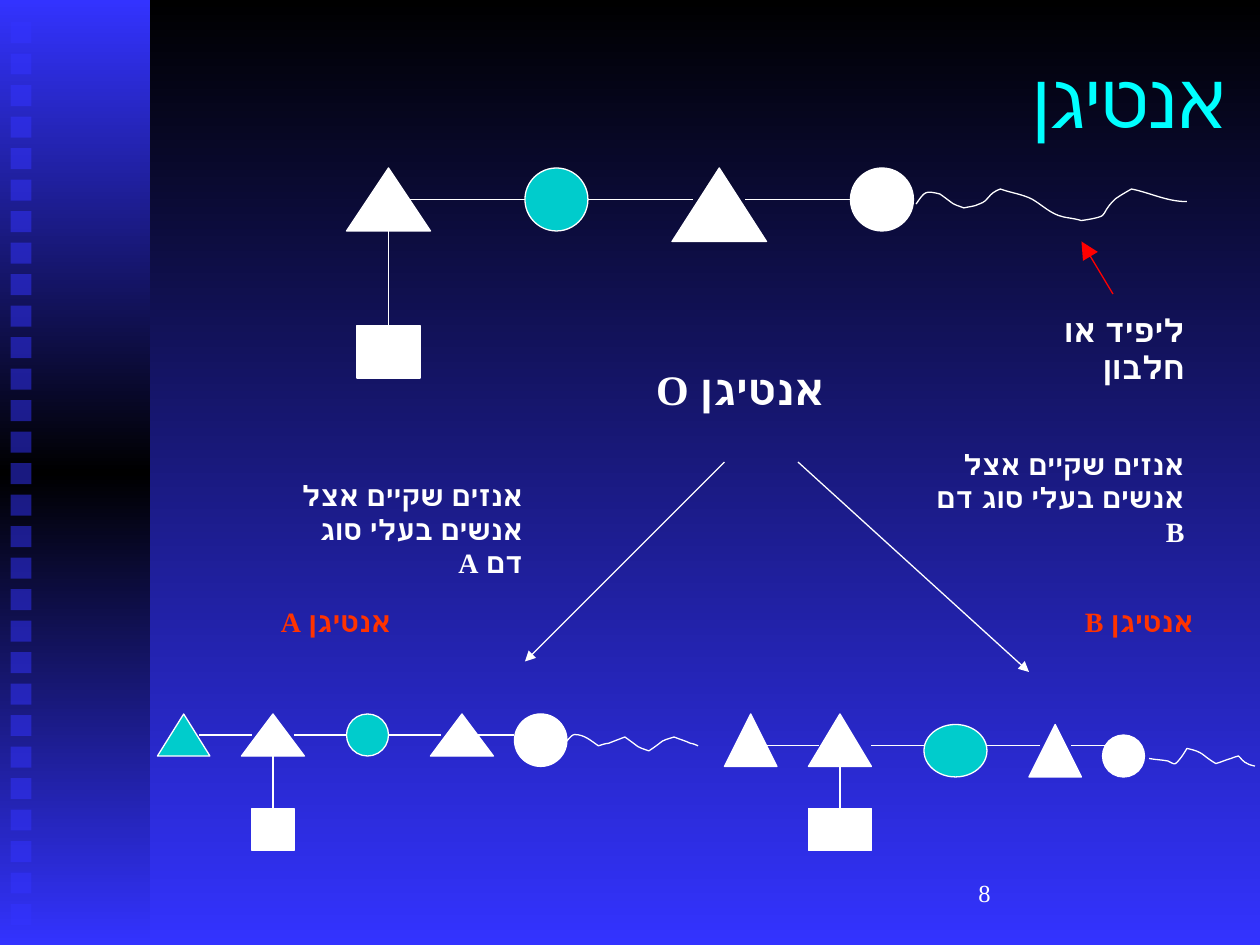
import copy

import pptx
import pptx.dml.color
import pptx.enum.shapes
import pptx.enum.text
import pptx.oxml
import pptx.oxml.ns
import pptx.util

WHITE, TEAL, BLUE, BLACK = "FFFFFF", "00CCCC", "3333FF", "000000"
CYAN, RED, ORANGE = "00FFFF", "FF0000", "FF3300"
FONT = "Times New Roman"
SHAPE = pptx.enum.shapes.MSO_SHAPE
ALIGN = pptx.enum.text.PP_ALIGN
TRIANGLE, CIRCLE, SQUARE = SHAPE.ISOSCELES_TRIANGLE, SHAPE.OVAL, SHAPE.RECTANGLE

# Wavy chains: a start point, then three curve points per bend, in inches.
CHAIN_O = [
    (7.27, 1.62), (7.34, 1.52), (7.34, 1.51), (7.46, 1.54),
    (7.6, 1.64), (7.54, 1.61), (7.65, 1.65), (7.69, 1.64), (7.73, 1.64), (7.77, 1.62),
    (7.86, 1.59), (7.83, 1.54), (7.94, 1.5), (8.02, 1.53), (8.11, 1.54), (8.19, 1.58),
    (8.26, 1.62), (8.32, 1.68), (8.4, 1.71), (8.45, 1.73), (8.52, 1.73), (8.58, 1.75),
    (8.59, 1.75), (8.73, 1.73), (8.75, 1.71), (8.77, 1.69), (8.78, 1.66), (8.79, 1.65),
    (8.81, 1.62), (8.83, 1.6), (8.85, 1.58), (8.89, 1.55), (8.98, 1.5), (8.98, 1.5),
    (9.13, 1.53), (9.26, 1.6), (9.42, 1.6)]
CHAIN_A = [
    (4.5, 5.88), (4.52, 5.86), (4.54, 5.83), (4.56, 5.83),
    (4.64, 5.83), (4.69, 5.88), (4.75, 5.92), (4.78, 5.91), (4.81, 5.9), (4.83, 5.9),
    (4.88, 5.88), (4.96, 5.85), (4.96, 5.85), (5.1, 5.95), (5.04, 5.92), (5.15, 5.96),
    (5.3, 5.86), (5.22, 5.89), (5.35, 5.85), (5.4, 5.87), (5.44, 5.88), (5.48, 5.9),
    (5.5, 5.9), (5.54, 5.92), (5.54, 5.92)]
CHAIN_B = [
    (9.12, 6.02), (9.17, 6.03), (9.22, 6.03), (9.27, 6.04),
    (9.29, 6.05), (9.32, 6.07), (9.33, 6.06), (9.37, 6.03), (9.42, 5.94), (9.42, 5.94),
    (9.56, 5.97), (9.53, 5.99), (9.65, 6.06), (9.69, 6.05), (9.73, 6.03), (9.77, 6.02),
    (9.79, 6.01), (9.83, 6), (9.83, 6), (9.85, 6.02), (9.87, 6.05), (9.9, 6.06),
    (9.91, 6.07), (9.96, 6.08), (9.96, 6.08)]


def grid(steps):
    """Length of a number of grid steps, twelve to the inch."""
    return pptx.util.Cm(steps * 2.54 / 12)


def rgb(code):
    return pptx.dml.color.RGBColor.from_string(code)


def xml_node(tag, **attributes):
    node = pptx.oxml.parse_xml(f"<a:{tag} {pptx.oxml.ns.nsdecls('a')}/>")
    for name, value in attributes.items():
        node.set(name, value)
    return node


def find(shape, tag):
    return shape._element.spPr.find(".//" + pptx.oxml.ns.qn(tag))


def draw_outline(line, color=WHITE):
    line.color.rgb = rgb(color)
    line.width = pptx.util.Pt(0.75)


def fade_down(fill, top, bottom):
    fill.gradient()
    fill.gradient_angle = 270
    for stop, color in zip(fill.gradient_stops, (top, bottom)):
        stop.color.rgb = rgb(color)


def add_block(shapes, kind, box, color):
    block = shapes.add_shape(kind, *map(grid, box))
    block.shadow.inherit = False
    block.fill.solid()
    block.fill.fore_color.rgb = rgb(color)
    block.line.fill.background()
    return block


def add_line(shapes, start, end, color=WHITE, head=None):
    """Straight line; head is the arrowhead size, such as med or lg."""
    line = shapes.add_connector(
        pptx.enum.shapes.MSO_CONNECTOR.STRAIGHT, *map(grid, (*start, *end)))
    draw_outline(line.line, color)
    if head:
        find(line, "a:ln").append(xml_node("tailEnd", type="triangle", w=head, len=head))
    line._element.spPr.append(xml_node("effectLst"))


def add_chain(shapes, points):
    first, *rest = [(grid(12 * x), grid(12 * y)) for x, y in points]
    builder = shapes.build_freeform(*first)
    builder.add_line_segments(rest, close=False)
    chain = builder.convert_to_shape()
    chain.shadow.inherit = False
    chain.fill.background()
    draw_outline(chain.line)
    outline = find(chain, "a:path")
    segments = list(outline)[1:]
    for bend in zip(*[iter(segments)] * 3):
        curve = xml_node("cubicBezTo")
        for segment in bend:
            curve.append(segment[0])
            outline.remove(segment)
        outline.append(curve)


def add_antigen(slide, bond_y, bonds, branch, sugars, chain):
    """Group of sugars on a row of bonds, with a branch and a wavy chain."""
    shapes = slide.shapes.add_group_shape().shapes
    for left, right in bonds:
        add_line(shapes, (left, bond_y), (right, bond_y))
    branch_x, top, bottom = branch
    add_line(shapes, (branch_x, top), (branch_x, bottom))
    for kind, box, color in sugars:
        draw_outline(add_block(shapes, kind, box, color).line)
    add_chain(shapes, chain)
    return shapes


def write(frame, text, size, color, align, bold=False, rtl=True):
    frame.text = text
    frame.word_wrap = True
    paragraph = frame.paragraphs[0]
    paragraph.alignment = align
    if rtl:
        paragraph._p.get_or_add_pPr().set("rtl", "1")
    font = paragraph.font
    font.name, font.size, font.bold = FONT, pptx.util.Pt(size), bold
    font.color.rgb = rgb(color)


def add_label(slide, text, box, size, color=WHITE, align=ALIGN.RIGHT):
    label = slide.shapes.add_textbox(*map(grid, box))
    write(label.text_frame, text, size, color, align, bold=True)


def add_sidebar(slide, master):
    """Draw the sidebar, then move it behind everything on the master."""
    sidebar = slide.shapes.add_group_shape()
    band = add_block(sidebar.shapes, SQUARE, (0, 0, 14.3, 90), BLUE)
    fade_down(band.fill, BLUE, BLACK)
    stops = find(band, "a:gsLst")
    last = copy.deepcopy(stops[0])
    last.set("pos", "100000")
    stops[1].set("pos", "50000")
    stops.append(last)
    for row in range(29):
        tile = add_block(sidebar.shapes, SQUARE, (1, 2.1 + 3 * row, 2, 2), BLUE)
        find(tile, "a:srgbClr").append(xml_node("alpha", val="50000"))
    master.element.cSld.spTree.insert(2, sidebar._element)


def add_title(slide):
    title = slide.shapes.title
    title.left, title.top, title.width, title.height = map(grid, (16, 1.8, 102, 15))
    title.text_frame.vertical_anchor = pptx.enum.text.MSO_ANCHOR.MIDDLE
    write(title.text_frame, "אנטיגן", 44, CYAN, ALIGN.RIGHT)


def add_page_number(slide):
    number = slide.shapes.add_textbox(*map(grid, (92, 82, 25, 6)))
    number.text_frame.vertical_anchor = pptx.enum.text.MSO_ANCHOR.MIDDLE
    write(number.text_frame, "8", 14, WHITE, ALIGN.LEFT, rtl=False)


def main():
    deck = pptx.Presentation()
    deck.slide_width, deck.slide_height = grid(120), grid(90)
    slide = deck.slides.add_slide(deck.slide_layouts[5])
    fade_down(slide.background.fill, BLACK, BLUE)
    add_sidebar(slide, deck.slide_master)
    add_title(slide)
    add_page_number(slide)
    add_label(slide, "ליפיד או חלבון", (95, 29, 19, 5), 18)

    antigen_o = add_antigen(
        slide, 19, [(39, 50), (56, 66), (71, 81)], (37, 22, 31),
        [(TRIANGLE, (33, 16, 8, 6), WHITE), (SQUARE, (34, 31, 6, 5), WHITE),
         (CIRCLE, (50, 16, 6, 6), TEAL), (TRIANGLE, (64, 16, 9, 7), WHITE),
         (CIRCLE, (81, 16, 6, 6), WHITE)], CHAIN_O)
    add_line(antigen_o, (106, 28), (103, 23), RED, head="lg")
    add_label(slide, "אנטיגן O", (59, 34, 23, 6), 24, align=ALIGN.CENTER)

    add_label(slide, "אנזים שקיים אצל אנשים בעלי סוג דם B", (88, 42, 26, 12.5), 16)
    add_line(slide.shapes, (76, 44), (98, 64), head="med")
    add_line(slide.shapes, (69, 44), (50, 63), head="med")
    add_label(slide, "אנזים שקיים אצל אנשים בעלי סוג דם A", (27, 45, 24, 7.7), 16)
    add_label(slide, "אנטיגן A", (23, 57, 18, 4.4), 16, ORANGE, ALIGN.CENTER)

    add_antigen(
        slide, 70, [(19, 24), (28, 33), (37, 42), (45, 49)], (26, 72, 77),
        [(TRIANGLE, (15, 68, 5, 4), TEAL), (TRIANGLE, (23, 68, 6, 4), WHITE),
         (SQUARE, (24, 77, 4, 4), WHITE), (CIRCLE, (33, 68, 4, 4), TEAL),
         (TRIANGLE, (41, 68, 6, 4), WHITE), (CIRCLE, (49, 68, 5, 5), WHITE)], CHAIN_A)
    add_antigen(
        slide, 71, [(73, 78), (83, 88), (94, 99), (102, 106)], (80, 73, 77),
        [(TRIANGLE, (69, 68, 5, 5), WHITE), (TRIANGLE, (77, 68, 6, 5), WHITE),
         (SQUARE, (77, 77, 6, 4), WHITE), (CIRCLE, (88, 69, 6, 5), TEAL),
         (TRIANGLE, (98, 69, 5, 5), WHITE), (CIRCLE, (105, 70, 4, 4), WHITE)], CHAIN_B)
    add_label(slide, "אנטיגן B", (99, 57, 19, 4.4), 16, ORANGE, ALIGN.CENTER)
    deck.save("out.pptx")


if __name__ == "__main__":
    main()
